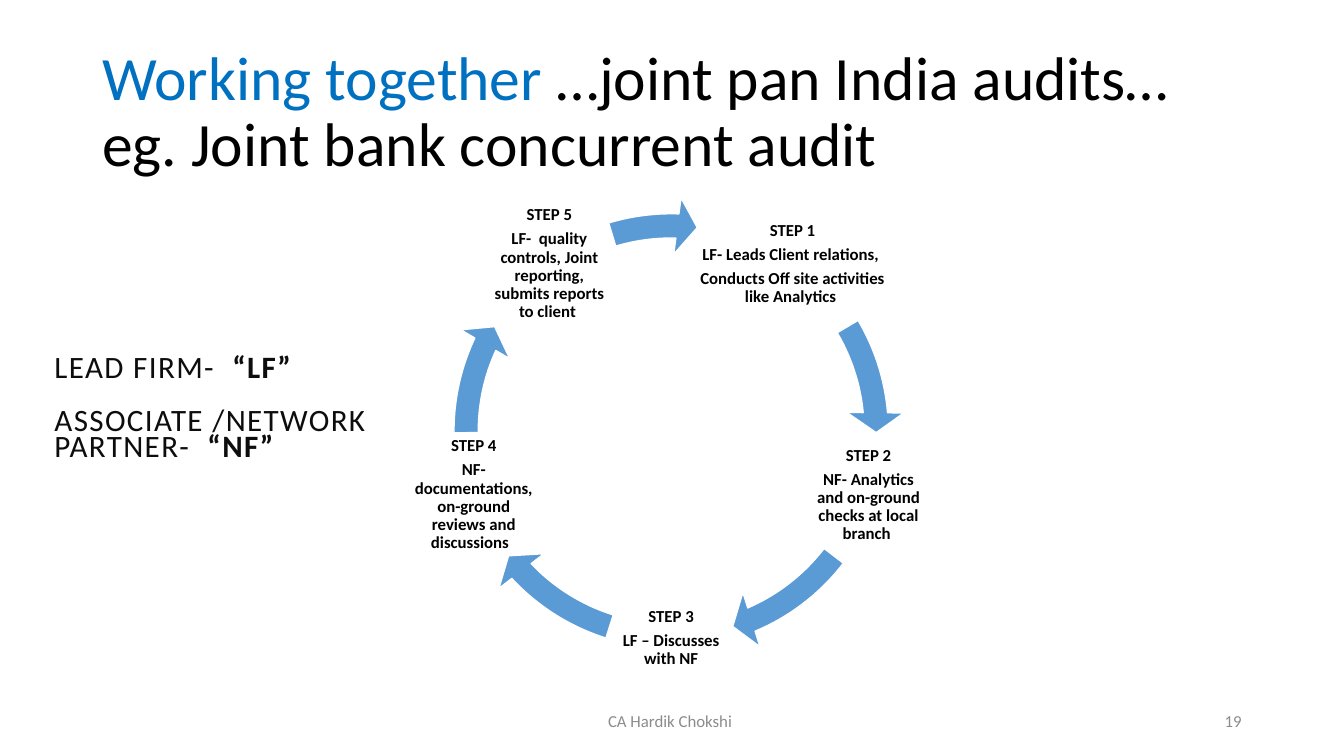
import pptx
import pptx.dml.color
import pptx.enum.shapes
import pptx.enum.text
import pptx.util

COLUMNS, ROWS = 160, 90
CELL = pptx.util.Inches(1 / 12)
ALIGN = pptx.enum.text.PP_ALIGN
BLACK, BLUE, GREY, INK = "000000", "0070C0", "8C8C8C", "0D0D0D"
ARROW_FILL, WHITE = "5B9BD5", "FFFFFF"


def cells(*values):
    return [round(value * CELL) for value in values]


def color(hex_string):
    return pptx.dml.color.RGBColor.from_string(hex_string)


def apply(target, values):
    for name, value in values.items():
        setattr(target, name, value)


class SlideBuilder:
    font_name = "Calibri"

    def __init__(self, presentation):
        self.slide = presentation.slides.add_slide(presentation.slide_layouts[6])

    def text(self, box, paragraphs, size, fill=BLACK, bold=False, spacing=None, inset=None, **layout):
        shape = self.slide.shapes.add_textbox(*cells(*box))
        frame = shape.text_frame
        apply(frame, {"word_wrap": True, "vertical_anchor": pptx.enum.text.MSO_ANCHOR.MIDDLE})
        if inset is not None:
            sides = ("left", "right", "top", "bottom")
            apply(frame, {f"margin_{side}": pptx.util.Inches(inset) for side in sides})
        for index, runs in enumerate(paragraphs):
            paragraph = frame.paragraphs[0] if index == 0 else frame.add_paragraph()
            apply(paragraph, layout)
            for words, changes in runs:
                for line_number, line in enumerate(words.split("\n")):
                    if line_number:
                        paragraph.add_line_break()
                    run = paragraph.add_run()
                    run.text = line
                    style = {"name": self.font_name, "size": pptx.util.Pt(size), "bold": bold}
                    style.update(changes)
                    run.font.color.rgb = color(style.pop("fill", fill))
                    apply(run.font, style)
                    if spacing:
                        run.font._element.set("spc", str(spacing * 100))

    def step(self, box, lines):
        self.text(box, [[(line, {})] for line in lines], 12, bold=True, inset=0.02,
                  alignment=ALIGN.CENTER, line_spacing=0.9, space_after=pptx.util.Pt(4.2))

    def arc_arrow(self, box, start, end):
        kind = pptx.enum.shapes.MSO_SHAPE.CIRCULAR_ARROW
        shape = self.slide.shapes.add_shape(kind, *cells(*box))
        shape.shadow.inherit = False
        shape.fill.solid()
        shape.fill.fore_color.rgb = color(ARROW_FILL)
        shape.line.color.rgb = color(WHITE)
        shape.line.width = pptx.util.Pt(1)
        head_angle = 5.59
        adjustments = (0.052, head_angle * 0.6, end * 0.6, start * 0.6, 0.061)
        for index, value in enumerate(adjustments):
            shape.adjustments[index] = value


def main():
    presentation = pptx.Presentation()
    apply(presentation, {"slide_width": COLUMNS * CELL, "slide_height": ROWS * CELL})
    builder = SlideBuilder(presentation)

    builder.text((11, 4.8, 138, 17.4), [[
        ("Working together ", {"fill": BLUE}),
        ("…joint pan India audits…\neg. Joint bank concurrent audit", {}),
    ]], 44, line_spacing=0.9)

    ring = (52.1, 23.5, 55.6, 55.6)
    step_height = 14.8
    steps = [
        (83, 24, 22.7, 329.4, 354.9,
         ["LF- Leads Client relations, ", "Conducts Off site activities like Analytics "]),
        (96, 51.5, 14.8, 37.53, 66.94,
         ["NF- Analytics and on-ground checks at local branch "]),
        (72.5, 68.6, 14.8, 107.47, 136.88,
         ["LF – Discusses with NF"]),
        (49, 51.5, 14.8, 179.5, 204.99,
         ["NF- documentations, on-ground reviews and discussions  "]),
        (58, 24, 14.8, 253.29, 271.74,
         ["LF-  quality controls, Joint reporting, submits reports to client "]),
    ]
    for number, (left, top, width, start, end, lines) in enumerate(steps, 1):
        builder.step((left, top, width, step_height), [f"STEP {number}"] + lines)
        builder.arc_arrow(ring, start, end)

    footer = {"size": 12, "fill": GREY}
    builder.text((53, 83.4, 54, 4.8), [[("CA Hardik Chokshi ", {})]], alignment=ALIGN.CENTER, **footer)
    builder.text((113, 83.4, 36, 4.8), [[("19", {})]], alignment=ALIGN.RIGHT, **footer)

    firms = [("LEAD FIRM-  ", "“LF”"), ("ASSOCIATE /NETWORK PARTNER-  ", "“NF”")]
    builder.text((5.3, 41.3, 40.4, 15.1),
                 [[(role, {}), (code, {"bold": True})] for role, code in firms],
                 22.2, fill=INK, spacing=1, line_spacing=0.7, space_after=pptx.util.Pt(18.6))

    presentation.save("out.pptx")


if __name__ == "__main__":
    main()
